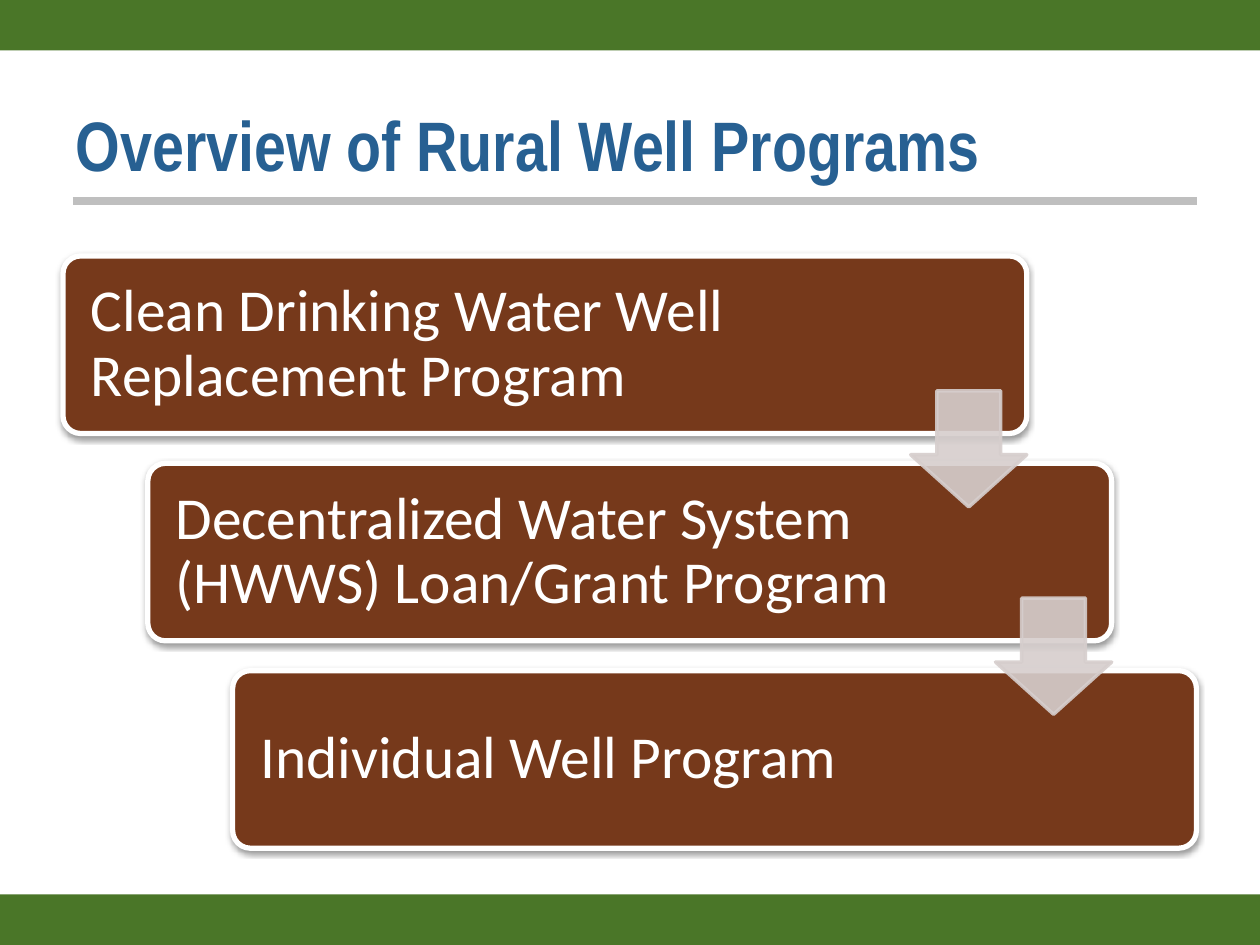
"""Build a slide that steps through three well programs."""
from lxml.etree import SubElement
from pptx import Presentation
from pptx.dml.color import RGBColor
from pptx.enum.shapes import MSO_CONNECTOR, MSO_SHAPE
from pptx.enum.text import MSO_ANCHOR as Anchor, MSO_AUTO_SIZE as AutoSize, PP_ALIGN as Align
from pptx.oxml import parse_xml
from pptx.oxml.ns import nsdecls, qn
from pptx.util import Cm, Pt

TITLE = "Overview of Rural Well Programs"
PROGRAMS = [
    "Clean Drinking Water Well Replacement Program",
    "Decentralized Water System (HWWS) Loan/Grant Program",
    "Individual Well Program",
]
COLORS = {"band": "4A7628", "rule": "BFBFBF", "title": "276092",
          "card": "76391B", "arrow": "D6CECD", "white": "FFFFFF"}
TITLE_FONT = {"name": "Arial Narrow", "size": Pt(40), "bold": True}
CARD_FONT = {"name": "Calibri", "size": Pt(34), "bold": False}
CARD_FRAME = {"word_wrap": True, "vertical_anchor": Anchor.MIDDLE,
              "margin_left": Cm(0.46), "margin_right": Cm(4.3),
              "margin_top": Cm(0.46), "margin_bottom": Cm(0.46)}
TITLE_FRAME = {"word_wrap": True, "vertical_anchor": Anchor.MIDDLE, "auto_size": AutoSize.NONE}

WIDTH, HEIGHT, BAND = 25.4, 19.05, 1.02
CARD_LEFT, CARD_TOP, CARD_WIDTH, CARD_HEIGHT = 1.27, 5.16, 19.43, 3.58
STEP_X, STEP_Y = 1.71, 4.18
ARROW_SIZE, ARROW_DROP = 2.34, 2.72
SHADOW = (f'<a:effectLst {nsdecls("a")}><a:outerShdw blurRad="{Pt(3.1)}" dist="{Pt(1.6)}" '
          'dir="5400000" rotWithShape="0"><a:srgbClr val="000000"><a:alpha val="38000"/>'
          '</a:srgbClr></a:outerShdw></a:effectLst>')


def color(name):
    return RGBColor.from_string(COLORS[name])


def apply(target, values):
    for key, value in values.items():
        setattr(target, key, value)


def write(frame, text, frame_format, font_format, font_color):
    apply(frame, frame_format)
    para = frame.paragraphs[0]
    para.alignment = Align.LEFT
    span = para.add_run()
    span.text = text
    apply(span.font, font_format)
    span.font.color.rgb = color(font_color)
    return para


def add_shape(page, kind, place, fill, line=None, weight=0):
    shape = page.shapes.add_shape(kind, *map(Cm, place))
    shape.shadow.inherit = False
    shape.fill.solid()
    shape.fill.fore_color.rgb = color(fill)
    if line:
        shape.line.color.rgb = color(line)
        shape.line.width = Pt(weight)
    else:
        shape.line.fill.background()
    return shape


def add_card(page, text, left, top):
    card = add_shape(page, MSO_SHAPE.ROUNDED_RECTANGLE,
                     (left, top, CARD_WIDTH, CARD_HEIGHT), "card", "white", 3)
    card.adjustments[0] = 0.1
    properties = card.element.spPr
    properties.replace(properties.find(qn("a:effectLst")), parse_xml(SHADOW))
    para = write(card.text_frame, text, CARD_FRAME, CARD_FONT, "white")
    para.line_spacing = 0.9


def add_arrow(page, left, top):
    arrow = add_shape(page, MSO_SHAPE.DOWN_ARROW,
                      (left, top, ARROW_SIZE, ARROW_SIZE), "arrow", "arrow", 2)
    arrow.adjustments[0], arrow.adjustments[1] = 0.55, 0.45
    for tint in arrow.element.spPr.iter(qn("a:srgbClr")):
        SubElement(tint, qn("a:alpha"), val="90000")


def main():
    deck = Presentation()
    deck.slide_width, deck.slide_height = Cm(WIDTH), Cm(HEIGHT)
    page = deck.slides.add_slide(deck.slide_layouts[5])

    for top in (0, HEIGHT - BAND):
        add_shape(page, MSO_SHAPE.RECTANGLE, (0, top, WIDTH, BAND), "band")
    rule = page.shapes.add_connector(MSO_CONNECTOR.STRAIGHT, *map(Cm, (1.47, 4.06, 24.13, 4.06)))
    rule.line.color.rgb = color("rule")
    rule.line.width = Pt(4.5)
    SubElement(rule.element.spPr, qn("a:effectLst"))

    title = page.shapes.title
    apply(title, {"left": Cm(1.27), "top": Cm(1.75), "width": Cm(22.86), "height": Cm(2.29)})
    write(title.text_frame, TITLE, TITLE_FRAME, TITLE_FONT, "title")

    places = [(CARD_LEFT + i * STEP_X, CARD_TOP + i * STEP_Y) for i in range(len(PROGRAMS))]
    for text, (left, top) in zip(PROGRAMS, places):
        add_card(page, text, left, top)
    for left, top in places[:-1]:
        add_arrow(page, left + CARD_WIDTH - ARROW_SIZE, top + ARROW_DROP)

    deck.save("out.pptx")


if __name__ == "__main__":
    main()
